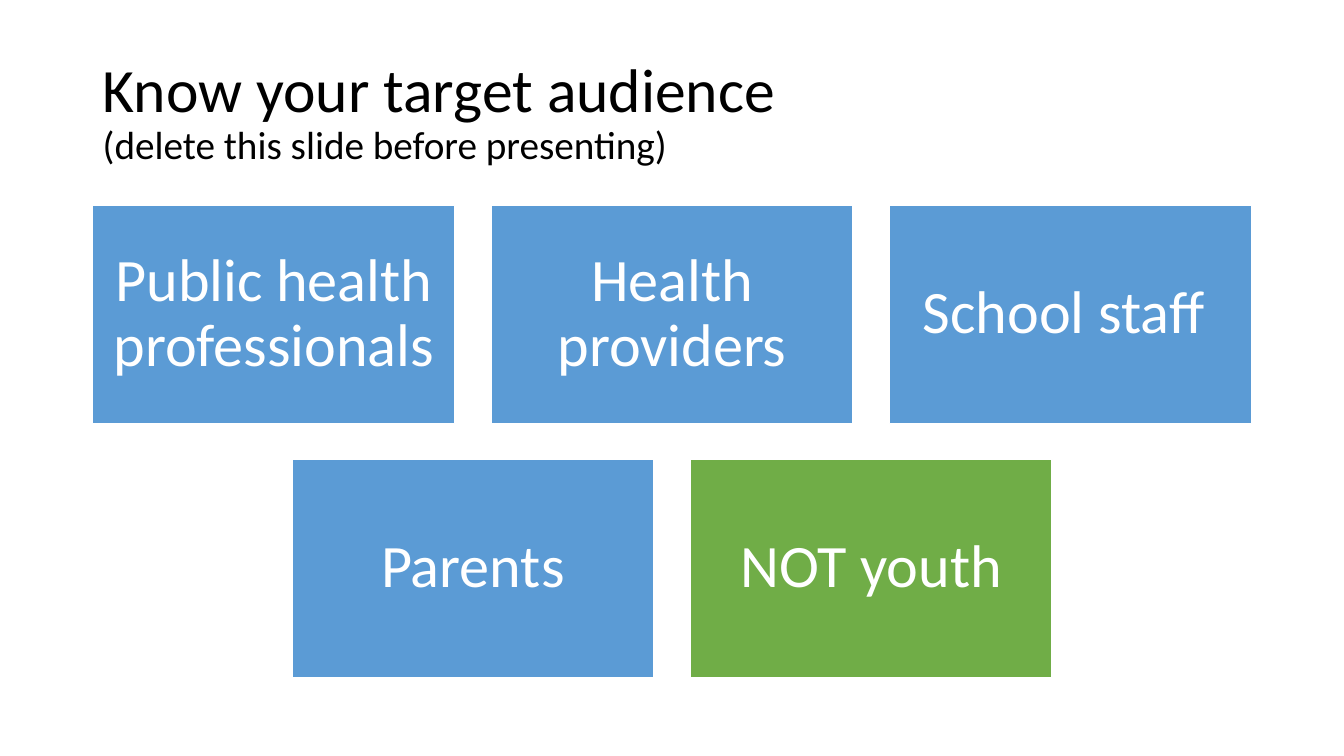
from pptx import Presentation
from pptx.dml.color import RGBColor
from pptx.enum.shapes import MSO_SHAPE
from pptx.enum.text import MSO_ANCHOR, PP_ALIGN
from pptx.util import Inches, Pt

COLORS = {"blue": "5B9BD5", "green": "70AD47", "white": "FFFFFF", "black": "000000"}
WIDTH, HEIGHT = 13.33, 7.5
BOX_W, BOX_H, GAP, TOP = 3.59, 2.16, 0.36, 2.04
ROWS = [
    [("Public health professionals", "blue"), ("Health providers", "blue"), ("School staff ", "blue")],
    [("Parents", "blue"), ("NOT youth", "green")],
]


def color(name):
    return RGBColor.from_string(COLORS[name])


def style(para, size, name, align):
    para.alignment = align
    para.line_spacing = 0.9
    for run in para.runs:
        run.font.name = "Calibri"
        run.font.size = Pt(size)
        run.font.color.rgb = color(name)


def add_title(slide, lines):
    box = slide.shapes.add_textbox(Inches(0.92), Inches(0.4), Inches(11.5), Inches(1.45))
    frame = box.text_frame
    frame.word_wrap = True
    frame.vertical_anchor = MSO_ANCHOR.MIDDLE
    frame.text = "\n".join(text for text, size in lines)
    for para, (text, size) in zip(frame.paragraphs, lines):
        style(para, size, "black", PP_ALIGN.LEFT)


def add_box(slide, left, top, text, fill):
    box = slide.shapes.add_shape(
        MSO_SHAPE.RECTANGLE, Inches(left), Inches(top), Inches(BOX_W), Inches(BOX_H))
    box.shadow.inherit = False
    box.fill.solid()
    box.fill.fore_color.rgb = color(fill)
    box.line.color.rgb = color("white")
    box.line.width = Pt(1)
    frame = box.text_frame
    frame.word_wrap = True
    frame.vertical_anchor = MSO_ANCHOR.MIDDLE
    frame.margin_left = frame.margin_right = Inches(0.18)
    frame.margin_top = frame.margin_bottom = Inches(0.18)
    frame.text = text
    style(frame.paragraphs[0], 43, "white", PP_ALIGN.CENTER)


def add_row(slide, top, items):
    pitch = BOX_W + GAP
    start = (WIDTH - len(items) * pitch + GAP) / 2
    for col, (text, fill) in enumerate(items):
        add_box(slide, start + col * pitch, top, text, fill)


def main():
    deck = Presentation()
    deck.slide_width, deck.slide_height = Inches(WIDTH), Inches(HEIGHT)
    slide = deck.slides.add_slide(deck.slide_layouts[6])
    add_title(slide, [
        ("Know your target audience", 44),
        ("(delete this slide before presenting)", 28),
    ])
    for row, items in enumerate(ROWS):
        add_row(slide, TOP + row * (BOX_H + GAP), items)
    deck.save("out.pptx")


if __name__ == "__main__":
    main()
